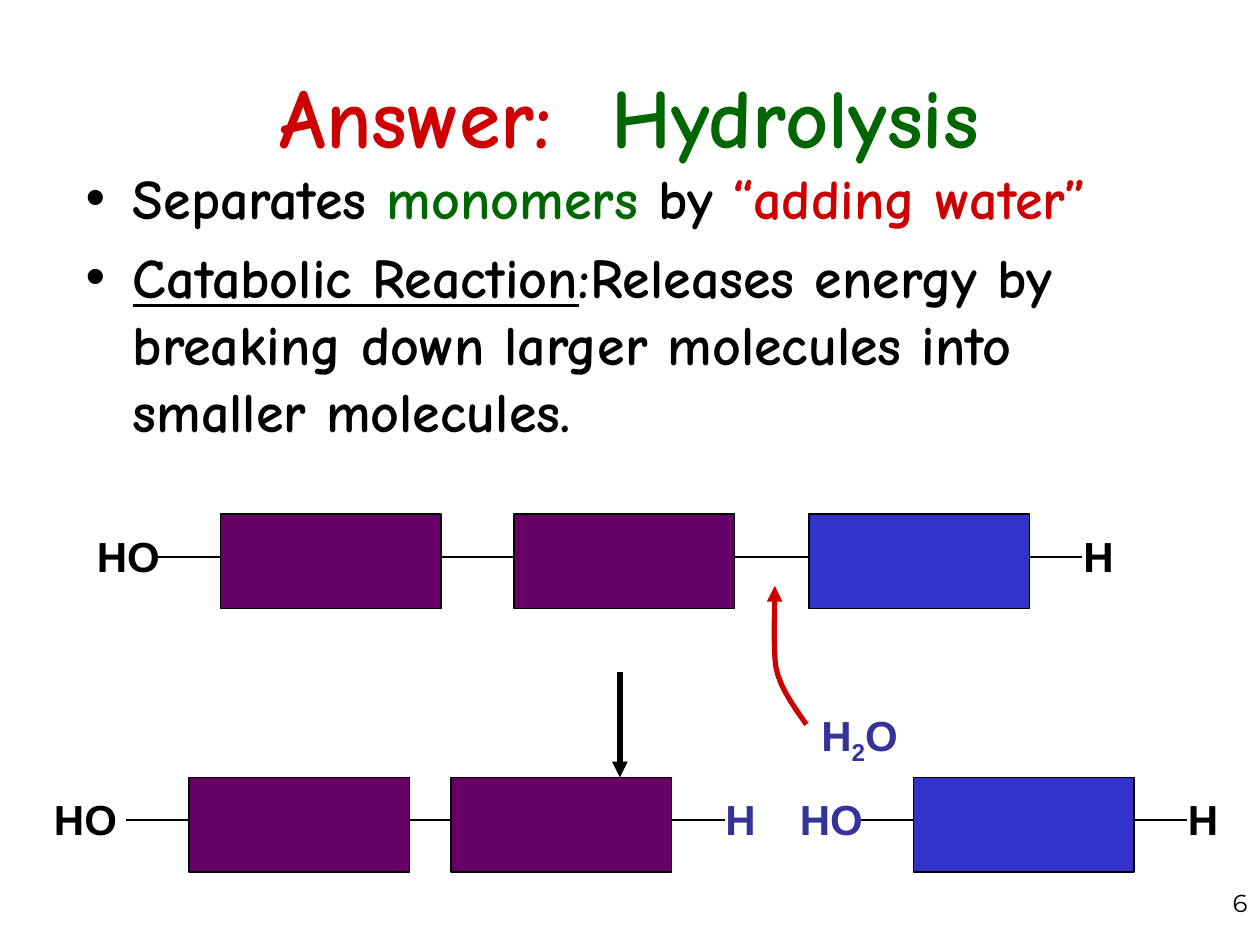
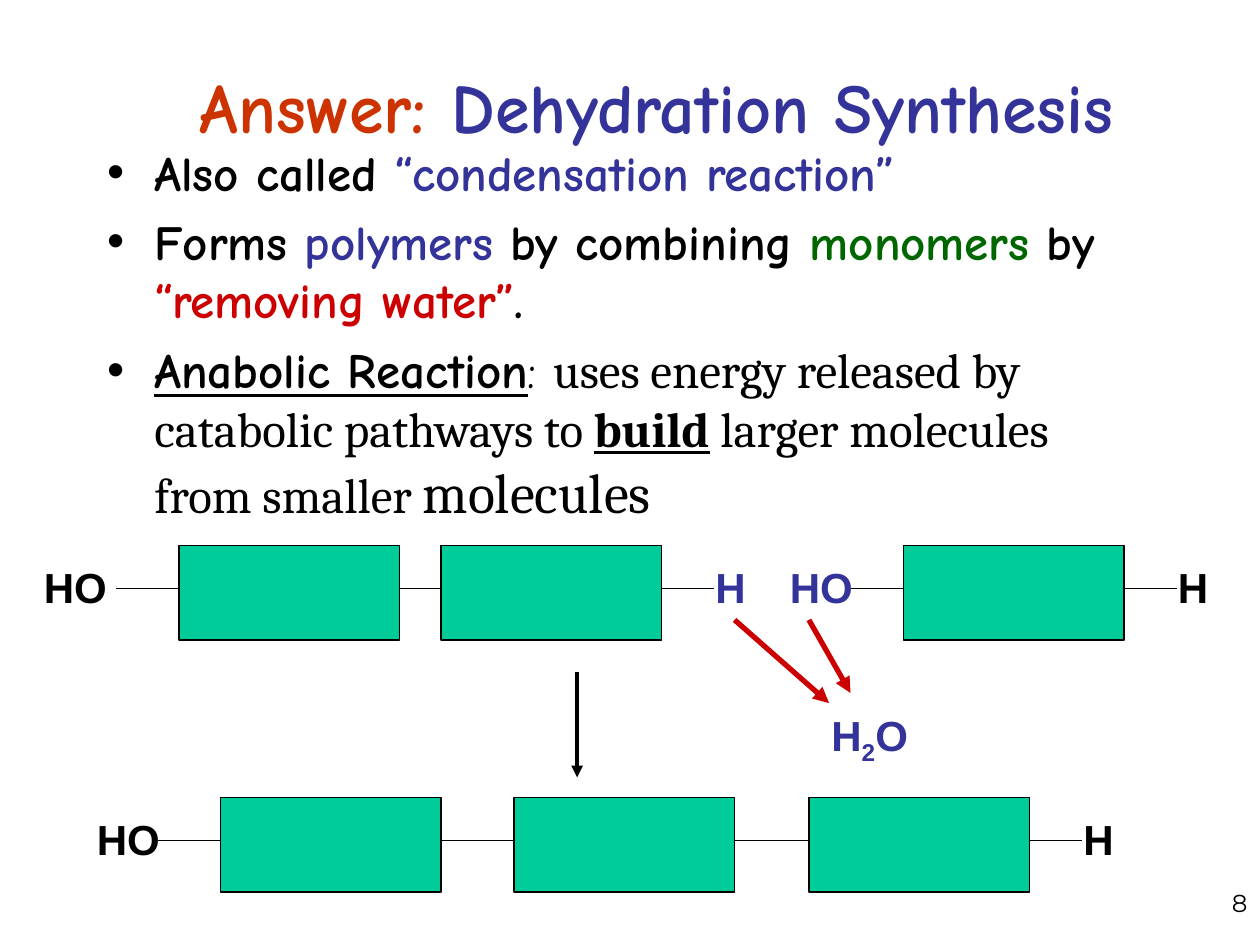
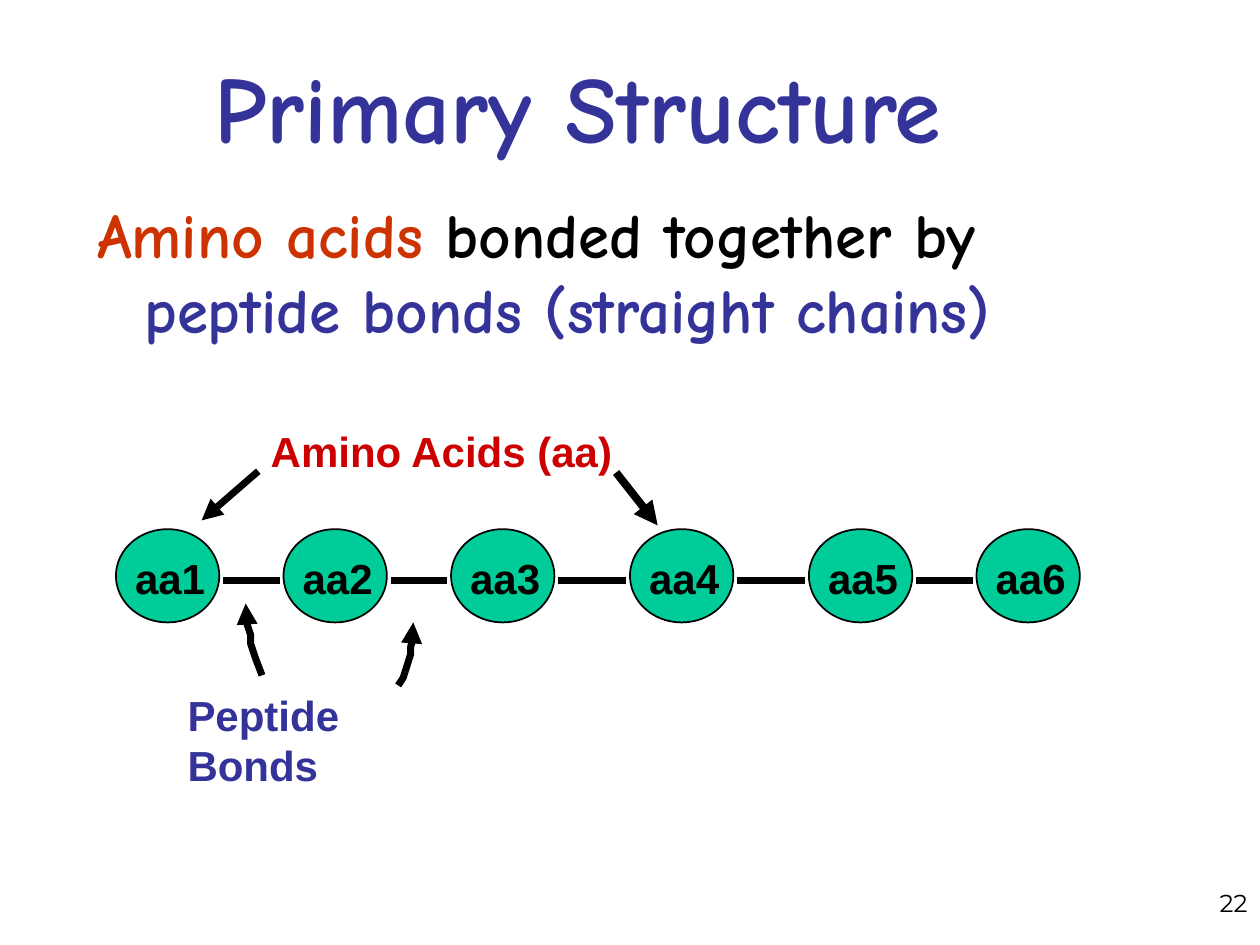
"""Build three biology slides on hydrolysis, dehydration synthesis and primary structure."""
from lxml import etree
from pptx import Presentation
from pptx.dml.color import RGBColor
from pptx.enum import shapes, text
from pptx.oxml import ns
from pptx.util import Inches, Pt

COLORS = {
    "black": "000000", "white": "FFFFFF", "red": "CC0000", "orange": "CC3300",
    "green": "006600", "navy": "333399", "purple": "660066", "blue": "3333CC",
    "teal": "00CC99",
}
HEADING_FONT = "Comic Neue"
LABEL_FONT = "Arial"
BLOCK_WIDTH, BLOCK_HEIGHT = 1.75, 0.75
BOND_DROP, RIGHT_BOND = 0.34, 0.42
CIRCLE_WIDTH, CIRCLE_HEIGHT = 0.82, 0.74
WATER = [("H", "navy"), ("2", "navy", {"subscript": True}), ("O", "navy")]


def write_runs(paragraph, runs, size, font, bold=True):
    for words, color, *options in runs:
        style = options[0] if options else {}
        run = paragraph.add_run()
        run.text = words
        run.font.name = style.get("font", font)
        run.font.size = Pt(style.get("size", size))
        run.font.bold = style.get("bold", bold)
        run.font.color.rgb = RGBColor.from_string(COLORS[color])
        if style.get("underline"):
            run.font.underline = True
        if style.get("subscript"):
            run.font._element.set("baseline", "-25000")


def style_line(shape, color, width, arrow=False):
    shape.line.color.rgb = RGBColor.from_string(COLORS[color])
    shape.line.width = Pt(width)
    properties = shape.element.spPr
    if arrow:
        outline = properties.find(ns.qn("a:ln"))
        etree.SubElement(outline, ns.qn("a:tailEnd")).set("type", "triangle")
    etree.SubElement(properties, ns.qn("a:effectLst"))


water_curve = []
for start, control_1, control_2, end in [
    ((6.4, 5.75), (6.29, 5.59), (6.15, 5.41), (6.15, 5.21)),
    ((6.15, 5.21), (6.14, 5.02), (6.15, 4.83), (6.15, 4.65)),
]:
    for step in range(9):
        t = step / 8
        water_curve.append([
            (1 - t) ** 3 * a + 3 * (1 - t) ** 2 * t * b + 3 * (1 - t) * t ** 2 * c + t ** 3 * d
            for a, b, c, d in zip(start, control_1, control_2, end)
        ])

plain = {"bold": False}
cambria = {"bold": False, "font": "Cambria"}
circle_lefts = [0.92, 2.25, 3.58, 5, 6.42, 7.75]
peptide_bonds = [
    ((left + 0.85, 4.61), (following - 0.03, 4.61), "black", 4, False)
    for left, following in zip(circle_lefts, circle_lefts[1:])
]

slides = [
    {
        "number": "6",
        "title": [("Answer:  ", "red"), ("Hydrolysis", "green")],
        "title_box": (1.08, 0.58, 7.83, 0.67), "title_size": 48,
        "body": [
            [("Separates ", "black"), ("monomers", "green"), (" by ", "black"),
             ("“adding water”", "red")],
            [("Catabolic Reaction", "black", {"underline": True}),
             (":Releases energy by breaking down larger molecules into smaller molecules.",
              "black")],
        ],
        "body_box": (0.58, 1.25, 8.83, 4.5), "body_size": 32, "bullets": True,
        "chains": [
            (4.08, [1.75, 4.08, 6.42], ["purple", "purple", "blue"], 1.08, 0.5, "black", "black"),
            (6.17, [1.5, 3.58], ["purple", "purple"], 1.17, 0.5, "black", "navy"),
            (6.17, [7.25], ["blue"], 1, 0.42, "navy", "black"),
        ],
        "labels": [(WATER, 6.42, 5.58, 0.82, False)],
        "lines": [((4.92, 5.33), (4.92, 6.17), "black", 3, True)],
        "curves": [(water_curve, "red", 3)],
        "circles": [],
    },
    {
        "number": "8",
        "title": [("Answer:", "orange"), (" Dehydration Synthesis", "navy")],
        "title_box": (0.67, 0.5, 9.08, 0.67), "title_size": 40,
        "body": [
            [("Also called ", "black"), ("“condensation reaction”", "navy")],
            [("Forms ", "black"), ("polymers", "navy"), (" by combining ", "black"),
             ("monomers", "green"), (" by ", "black"), ("“removing water”", "red"),
             (".", "black")],
            [("Anabolic Reaction", "black", {"underline": True}), (": ", "black", plain),
             ("uses energy released by catabolic pathways to ", "black", cambria),
             ("build", "black", {"font": "Cambria", "underline": True}),
             (" larger molecules from smaller ", "black", cambria),
             ("molecules", "black", {**cambria, "size": 32})],
        ],
        "body_box": (0.75, 1.08, 8.5, 4.5), "body_size": 28, "bullets": True,
        "chains": [
            (6.33, [1.75, 4.08, 6.42], ["teal"] * 3, 1.08, 0.5, "black", "black"),
            (4.33, [1.42, 3.5], ["teal"] * 2, 1.17, 0.5, "black", "navy"),
            (4.33, [7.17], ["teal"], 1, 0.42, "navy", "black"),
        ],
        "labels": [(WATER, 6.5, 5.58, 0.82, False)],
        "lines": [
            ((4.58, 5.33), (4.58, 6.17), "black", 2.25, True),
            ((5.83, 4.92), (6.58, 5.58), "red", 3, True),
            ((6.42, 4.92), (6.75, 5.5), "red", 3, True),
        ],
        "curves": [],
        "circles": [],
    },
    {
        "number": "22",
        "title": [("Primary Structure", "navy")],
        "title_box": (0.67, 0.5, 7.83, 0.67), "title_size": 54,
        "body": [
            [("Amino acids ", "orange"), ("bonded together by ", "black"),
             ("peptide bonds (straight chains)", "navy")],
        ],
        "body_box": (0.67, 1.5, 7.83, 2), "body_size": 36, "bullets": False,
        "chains": [],
        "labels": [
            ([("Peptide Bonds", "navy")], 1.39, 5.42, 2, True),
            ([("Amino Acids (aa)", "red")], 2.05, 3.33, 2.92, False),
        ],
        "lines": peptide_bonds + [
            ((2.05, 3.74), (1.6, 4.13), "black", 4, True),
            ((4.89, 3.75), (5.22, 4.17), "black", 4.5, True),
        ],
        "curves": [
            ([(2.08, 5.36), (2.03, 5.23), (1.99, 5.11), (1.99, 5.04), (1.95, 4.92),
              (1.95, 4.79)], "black", 4),
            ([(3.16, 5.44), (3.2, 5.38), (3.26, 5.19), (3.26, 5.13), (3.28, 5.06),
              (3.28, 4.94)], "black", 4),
        ],
        "circles": circle_lefts,
    },
]

presentation = Presentation()
presentation.slide_width, presentation.slide_height = Inches(10), Inches(7.5)

for content in slides:
    slide = presentation.slides.add_slide(presentation.slide_layouts[1])
    slide.background.fill.solid()
    slide.background.fill.fore_color.rgb = RGBColor.from_string(COLORS["white"])
    title, body = slide.placeholders
    for placeholder, box in [(title, content["title_box"]), (body, content["body_box"])]:
        placeholder.left, placeholder.top, placeholder.width, placeholder.height = map(Inches, box)
        placeholder.text_frame.auto_size = text.MSO_AUTO_SIZE.NONE
    title.text_frame.vertical_anchor = text.MSO_ANCHOR.MIDDLE
    title.text_frame.paragraphs[0].alignment = text.PP_ALIGN.CENTER
    write_runs(title.text_frame.paragraphs[0], content["title"], content["title_size"], HEADING_FONT)

    body.text_frame.paragraphs[0].space_before = Pt(0)
    for index, runs in enumerate(content["body"]):
        paragraph = body.text_frame.add_paragraph() if index else body.text_frame.paragraphs[0]
        if not content["bullets"]:
            etree.SubElement(paragraph._p.get_or_add_pPr(), ns.qn("a:buNone"))
        write_runs(paragraph, runs, content["body_size"], HEADING_FONT)

    number_box = slide.shapes.add_textbox(Inches(7.92), Inches(7), Inches(2.08), Inches(0.5))
    number_box.text_frame.word_wrap = True
    number_paragraph = number_box.text_frame.paragraphs[0]
    number_paragraph.alignment = text.PP_ALIGN.RIGHT
    write_runs(number_paragraph, [(content["number"], "black")], 14, "Montserrat", bold=False)

    labels = list(content["labels"])
    lines = list(content["lines"])
    for top, lefts, fills, label_offset, left_bond, start_color, end_color in content["chains"]:
        for left, fill in zip(lefts, fills):
            block = slide.shapes.add_shape(
                shapes.MSO_SHAPE.RECTANGLE, Inches(left), Inches(top),
                Inches(BLOCK_WIDTH), Inches(BLOCK_HEIGHT))
            block.fill.solid()
            block.fill.fore_color.rgb = RGBColor.from_string(COLORS[fill])
            style_line(block, "black", 1)
        rights = [left + BLOCK_WIDTH for left in lefts]
        bond_starts = [lefts[0] - left_bond] + rights
        bond_ends = lefts + [rights[-1] + RIGHT_BOND]
        for bond_start, bond_end in zip(bond_starts, bond_ends):
            lines.append(((bond_start, top + BOND_DROP), (bond_end, top + BOND_DROP),
                          "black", 1, False))
        labels.append(([("HO", start_color)], lefts[0] - label_offset, top + 0.08, 0.7, False))
        labels.append(([("H", end_color)], rights[-1] + 0.33, top + 0.08, 0.44, False))

    for index, left in enumerate(content["circles"], 1):
        circle = slide.shapes.add_shape(
            shapes.MSO_SHAPE.OVAL, Inches(left), Inches(4.2),
            Inches(CIRCLE_WIDTH), Inches(CIRCLE_HEIGHT))
        circle.fill.solid()
        circle.fill.fore_color.rgb = RGBColor.from_string(COLORS["teal"])
        style_line(circle, "black", 1)
        frame = circle.text_frame
        frame.word_wrap = False
        frame.vertical_anchor = text.MSO_ANCHOR.MIDDLE
        frame.margin_left, frame.margin_top = Inches(0.04), Inches(0.03)
        frame.margin_right = frame.margin_bottom = 0
        frame.paragraphs[0].alignment = text.PP_ALIGN.CENTER
        write_runs(frame.paragraphs[0], [(f"aa{index}", "black")], 24, LABEL_FONT)

    for runs, left, top, width, wrap in labels:
        label = slide.shapes.add_textbox(Inches(left), Inches(top), Inches(width), Inches(0.5))
        label.text_frame.word_wrap = wrap
        label.text_frame.auto_size = text.MSO_AUTO_SIZE.SHAPE_TO_FIT_TEXT
        write_runs(label.text_frame.paragraphs[0], runs, 24, LABEL_FONT)

    for start, end, color, width, arrow in lines:
        connector = slide.shapes.add_connector(
            shapes.MSO_CONNECTOR.STRAIGHT, *map(Inches, start), *map(Inches, end))
        style_line(connector, color, width, arrow)

    for points, color, width in content["curves"]:
        start, *rest = [(Inches(x), Inches(y)) for x, y in points]
        builder = slide.shapes.build_freeform(*start)
        builder.add_line_segments(rest, close=False)
        curve = builder.convert_to_shape()
        curve.fill.background()
        style_line(curve, color, width, arrow=True)

presentation.save("out.pptx")
